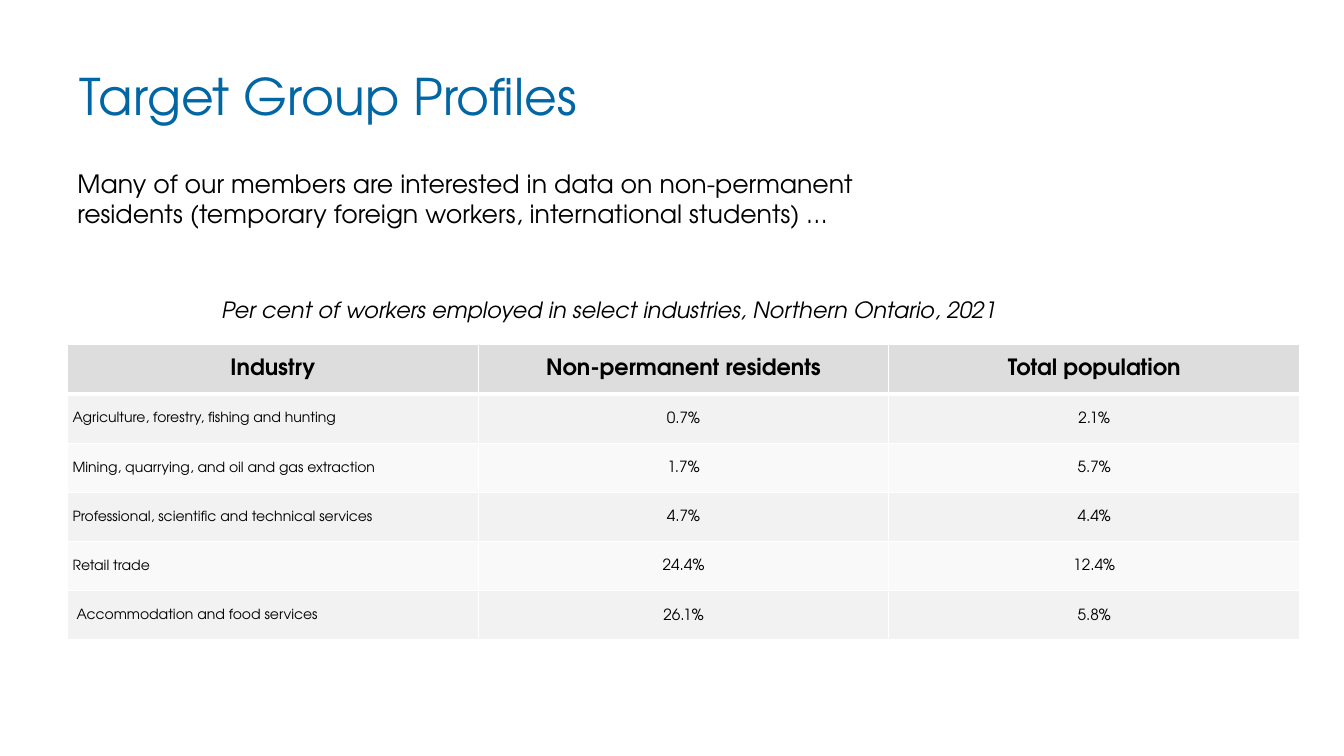
"""Build the Target Group Profiles slide, with lengths in percent of the slide size."""
from dataclasses import dataclass

import pptx
import pptx.dml.color
import pptx.enum.text
import pptx.oxml
import pptx.oxml.ns
import pptx.util

COLORS = {"title": "0066A4", "text": "000000", "line": "FFFFFF",
          "head": "DDDDDD", "odd": "F2F2F2", "even": "F9F9F9"}
FONT = "TeX Gyre Adventor"
WIDTH, HEIGHT = pptx.util.Inches(13.33), pptx.util.Inches(7.5)
ALIGN = pptx.enum.text.PP_ALIGN
ANCHOR = pptx.enum.text.MSO_ANCHOR


@dataclass
class Area:
    left: float
    top: float
    width: float
    height: float

    def emu(self) -> tuple[int, int, int, int]:
        return (round(WIDTH * self.left / 100), round(HEIGHT * self.top / 100),
                round(WIDTH * self.width / 100), round(HEIGHT * self.height / 100))


@dataclass
class Style:
    size: float
    color: str = "text"
    bold: bool = False
    italic: bool = False


@dataclass
class Label:
    text: str
    area: Area
    style: Style
    inset: bool = True


@dataclass
class Industry:
    name: str
    residents: str
    population: str
    indent: float = 0.05


LABELS = [
    Label("Target Group Profiles", Area(5.93, 8.67, 90, 8.93), Style(36, "title"), False),
    Label("Many of our members are interested in data on non-permanent residents "
          "(temporary foreign workers, international students) …",
          Area(5.03, 21.6, 60.24, 9.47), Style(18)),
    Label("Per cent of workers employed in select industries, Northern Ontario, 2021",
          Area(15.75, 38.53, 70.37, 4.93), Style(16, italic=True)),
]
TABLE_AREA = Area(5.03, 45.6, 91.67, 39.07)
HEADINGS = ["Industry", "Non-permanent residents", "Total population"]
INDUSTRIES = [
    Industry("Agriculture, forestry, fishing and hunting", "0.7%", "2.1%"),
    Industry("Mining, quarrying, and oil and gas extraction", "1.7%", "5.7%"),
    Industry("Professional, scientific and technical services", "4.7%", "4.4%"),
    Industry("Retail trade", "24.4%", "12.4%"),
    Industry("Accommodation and food services", "26.1%", "5.8%", 0.09),
]


def rgb(name: str) -> pptx.dml.color.RGBColor:
    return pptx.dml.color.RGBColor.from_string(COLORS[name])


def add_run(p, text: str, style: Style) -> None:
    r = p.add_run()
    r.text = text
    r.font.name = FONT
    r.font.size = pptx.util.Pt(style.size)
    r.font.bold = style.bold
    r.font.italic = style.italic
    r.font.color.rgb = rgb(style.color)


def add_label(s, label: Label) -> None:
    tf = s.shapes.add_textbox(*label.area.emu()).text_frame
    tf.word_wrap = True
    tf.vertical_anchor = ANCHOR.TOP
    if not label.inset:
        tf.margin_left = tf.margin_top = tf.margin_right = tf.margin_bottom = 0
    add_run(tf.paragraphs[0], label.text, label.style)


def add_borders(cell, top: float, bottom: float) -> None:
    tc_pr = cell._tc.get_or_add_tcPr()
    for side, width in {"L": 1, "R": 1, "T": top, "B": bottom}.items():
        tc_pr.append(pptx.oxml.parse_xml(
            f'<a:ln{side} {pptx.oxml.ns.nsdecls("a")} w="{pptx.util.Pt(width)}">'
            f'<a:solidFill><a:srgbClr val="{COLORS["line"]}"/></a:solidFill></a:ln{side}>'))


def fill_cell(cell, text: str, style: Style, fill: str, align) -> None:
    cell.fill.solid()
    cell.fill.fore_color.rgb = rgb(fill)
    cell.vertical_anchor = ANCHOR.MIDDLE
    p = cell.text_frame.paragraphs[0]
    p.alignment = align
    add_run(p, text, style)


def add_industry_table(s) -> None:
    table = s.shapes.add_table(len(INDUSTRIES) + 1, len(HEADINGS), *TABLE_AREA.emu()).table
    for col, heading in enumerate(HEADINGS):
        cell = table.cell(0, col)
        add_borders(cell, 1, 3)
        fill_cell(cell, heading, Style(16, bold=True), "head", ALIGN.CENTER)
    for row, industry in enumerate(INDUSTRIES, 1):
        values = [industry.name, industry.residents, industry.population]
        for col, value in enumerate(values):
            cell = table.cell(row, col)
            add_borders(cell, 3 if row == 1 else 1, 1)
            cell.margin_left = pptx.util.Inches(0.01 if col else industry.indent)
            cell.margin_top = cell.margin_right = pptx.util.Inches(0.01)
            cell.margin_bottom = 0
            fill_cell(cell, value, Style(11 if col else 10), "odd" if row % 2 else "even",
                      ALIGN.CENTER if col else ALIGN.LEFT)


def main() -> None:
    prs = pptx.Presentation()
    prs.slide_width, prs.slide_height = WIDTH, HEIGHT
    s = prs.slides.add_slide(prs.slide_layouts[6])
    for label in LABELS:
        add_label(s, label)
    add_industry_table(s)
    prs.save("out.pptx")


if __name__ == "__main__":
    main()
